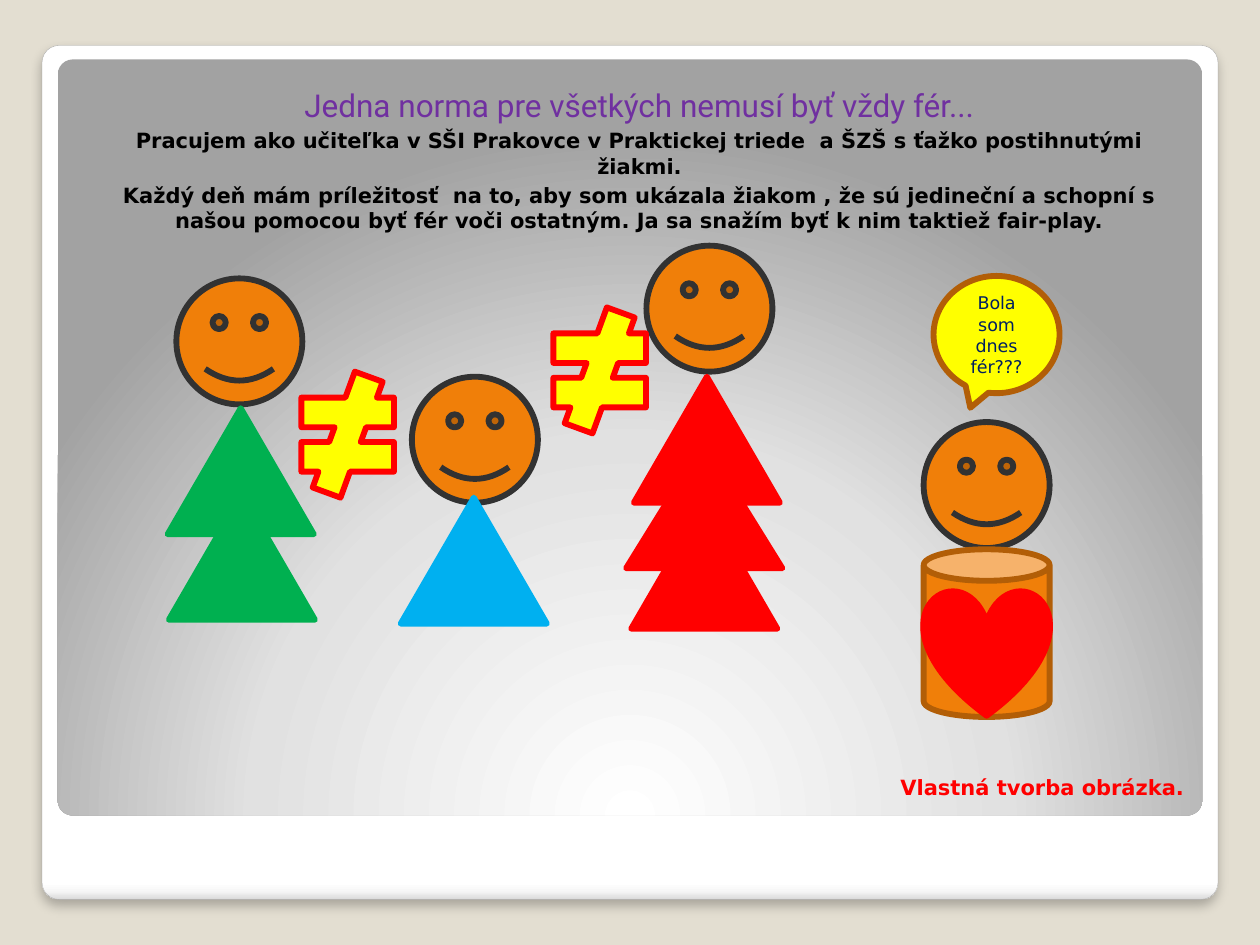
from dataclasses import dataclass
from typing import NamedTuple

from lxml import etree
from pptx import Presentation
from pptx.dml.color import RGBColor
from pptx.enum.shapes import MSO_SHAPE
from pptx.enum.text import MSO_ANCHOR, MSO_AUTO_SIZE, PP_ALIGN
from pptx.oxml.ns import nsdecls, qn
from pptx.util import Pt

ROUND_RECT = MSO_SHAPE.ROUNDED_RECTANGLE
SMILEY = MSO_SHAPE.SMILEY_FACE
TRIANGLE = MSO_SHAPE.ISOSCELES_TRIANGLE
NOT_EQUAL = MSO_SHAPE.MATH_NOT_EQUAL
CALLOUT = MSO_SHAPE.OVAL_CALLOUT
CAN = MSO_SHAPE.CAN
HEART = MSO_SHAPE.HEART
CENTER, RIGHT = PP_ALIGN.CENTER, PP_ALIGN.RIGHT
TOP, MIDDLE, BOTTOM = MSO_ANCHOR.TOP, MSO_ANCHOR.MIDDLE, MSO_ANCHOR.BOTTOM
NO_AUTOFIT = MSO_AUTO_SIZE.NONE


@dataclass(frozen=True)
class Theme:
    background: str = "E3DED1"
    card_line: str = "A4A4A4"
    orange: str = "F07F09"
    brown: str = "B25E07"
    dark: str = "323232"
    red: str = "FF0000"
    yellow: str = "FFFF00"
    green: str = "00B050"
    blue: str = "00B0F0"
    navy: str = "002060"
    purple: str = "7030A0"
    black: str = "000000"
    font: str = "DejaVu Sans"
    heading_font: str = "Roboto"
    heading_size: float = 18
    body_size: float = 12
    speech_size: float = 10
    line_width: float = 3.35


THEME = Theme()
UNIT = 72  # side of the faces, signs and heart


class Box(NamedTuple):
    left: float
    top: float
    width: float = UNIT
    height: float = UNIT


class Figure(NamedTuple):
    kind: MSO_SHAPE
    box: Box
    fill: str
    line: str


class Line(NamedTuple):
    text: str
    font: str
    size: float
    color: str
    bold: bool = False


def face(left: float, top: float) -> Figure:
    return Figure(SMILEY, Box(left, top), THEME.orange, THEME.dark)


def dress(left: float, top: float, color: str, width: float = 83.5) -> Figure:
    return Figure(TRIANGLE, Box(left, top, width), color, color)


def unequal(left: float, top: float) -> Figure:
    return Figure(NOT_EQUAL, Box(left, top), THEME.yellow, THEME.red)


FIGURES = [
    face(527.8, 241.2),
    face(235.4, 215.3),
    face(100.8, 159.1),
    face(369.4, 140.4),
    dress(360.7, 287.3, THEME.red),
    Figure(CAN, Box(527.8, 313.9, UNIT, 95.8), THEME.orange, THEME.brown),
    dress(229, 284.4, THEME.blue),
    dress(95.8, 233.3, THEME.green),
    dress(96.5, 282.2, THEME.green),
    dress(357.8, 252.7, THEME.red, 89.3),
    dress(362.2, 215.3, THEME.red),
    unequal(162.7, 212.4),
    unequal(306.7, 175.7),
    Figure(HEART, Box(527.8, 337), THEME.red, THEME.red),
]
SPEECH = Figure(CALLOUT, Box(533.5, 157.7, UNIT, 67), THEME.yellow, THEME.brown)

INTRO = [
    Line("Jedna norma pre všetkých nemusí byť vždy fér...",
         THEME.heading_font, THEME.heading_size, THEME.purple),
    Line("Pracujem ako učiteľka v SŠI Prakovce v Praktickej triede  a ŠZŠ "
         "s ťažko postihnutými žiakmi.",
         THEME.font, THEME.body_size, THEME.black, True),
    Line("Každý deň mám príležitosť  na to, aby som ukázala žiakom , že sú "
         "jedineční a schopní s našou pomocou byť fér voči ostatným. "
         "Ja sa snažím byť k nim taktiež fair-play.",
         THEME.font, THEME.body_size, THEME.black, True),
]

CARD_STOPS = [(0, "FFFFFF"), (98, "FFFFFF"), (99, "F7F7F7"), (100, "DADADA")]
PANEL_STOPS = [(0, "FFFFFF"), (55, "E1E1E1"), (100, "A2A2A2")]
DOWNWARD = '<a:lin ang="5400000" scaled="0"/>'
FROM_BELOW = ('<a:path path="circle"><a:fillToRect l="50000" t="175000" '
              'r="50000" b="-75000"/></a:path>')
CARD_SHADOW = (f'<a:effectLst {nsdecls("a")}><a:outerShdw blurRad="{Pt(6)}" '
               f'dist="{Pt(4)}" dir="5400000" algn="t" rotWithShape="0">'
               '<a:srgbClr val="000000"><a:alpha val="25000"/></a:srgbClr>'
               '</a:outerShdw></a:effectLst>')


def rgb(color: str) -> RGBColor:
    return RGBColor.from_string(color)


def add_shape(s, kind: MSO_SHAPE, box: Box):
    sp = s.shapes.add_shape(kind, *map(Pt, box))
    sp.shadow.inherit = False
    return sp


def add_panel(s, box: Box, stops: list[tuple[int, str]], direction: str):
    """Add a rounded panel with a gradient, behind the title."""
    sp = add_shape(s, ROUND_RECT, box)
    sp.adjustments[0] = 0.02
    sp.line.fill.background()
    marks = "".join(f'<a:gs pos="{pos * 1000}"><a:srgbClr val="{color}"/></a:gs>'
                    for pos, color in stops)
    grad = etree.fromstring(f'<a:gradFill {nsdecls("a")} rotWithShape="1">'
                            f'<a:gsLst>{marks}</a:gsLst>{direction}</a:gradFill>')
    sp.element.spPr.find(qn("a:prstGeom")).addnext(grad)
    s.shapes.title.element.addprevious(sp.element)
    return sp


def add_figure(s, figure: Figure):
    sp = add_shape(s, figure.kind, figure.box)
    sp.fill.solid()
    sp.fill.fore_color.rgb = rgb(figure.fill)
    sp.line.color.rgb = rgb(figure.line)
    sp.line.width = Pt(THEME.line_width)
    etree.SubElement(sp.element.spPr.find(qn("a:ln")), qn("a:round"))
    return sp


def write(sp, lines: list[Line], align: PP_ALIGN, anchor: MSO_ANCHOR,
          space_before: float = 0) -> None:
    tf = sp.text_frame
    tf.word_wrap = True
    tf.auto_size = NO_AUTOFIT
    tf.vertical_anchor = anchor
    for i, line in enumerate(lines):
        p = tf.add_paragraph() if i else tf.paragraphs[0]
        p.text = line.text
        p.alignment = align
        p.space_before = Pt(space_before)
        p.font.name = line.font
        p.font.size = Pt(line.size)
        p.font.bold = line.bold
        p.font.color.rgb = rgb(line.color)


def main() -> None:
    prs = Presentation()
    prs.slide_width, prs.slide_height = Pt(720), Pt(540)
    s = prs.slides.add_slide(prs.slide_layouts[5])
    s.background.fill.solid()
    s.background.fill.fore_color.rgb = rgb(THEME.background)

    card = add_panel(s, Box(24, 26, 672, 488), CARD_STOPS, DOWNWARD)
    card.line.color.rgb = rgb(THEME.card_line)
    card.line.width = Pt(0.16)
    card.element.spPr.find(qn("a:effectLst")).getparent().replace(
        card.element.spPr.find(qn("a:effectLst")), etree.fromstring(CARD_SHADOW))
    add_panel(s, Box(33, 34, 654, 432), PANEL_STOPS, FROM_BELOW)

    title = s.shapes.title
    title.left, title.top, title.width, title.height = map(
        Pt, Box(39.6, 392.4, 644.4, 82.8))
    write(title, [Line("Vlastná tvorba obrázka.", THEME.font, THEME.body_size,
                       THEME.red, True)], RIGHT, BOTTOM)
    title.text_frame.margin_bottom = Pt(18)

    intro = s.shapes.add_textbox(*map(Pt, Box(39.6, 41.8, 644.4, 329.8)))
    write(intro, INTRO, CENTER, TOP, space_before=2.5)
    tf = intro.text_frame
    tf.margin_left, tf.margin_top = Pt(14.4), Pt(7.2)

    for figure in FIGURES:
        add_figure(s, figure)
    write(add_figure(s, SPEECH),
          [Line("Bola som dnes fér???", THEME.font, THEME.speech_size, THEME.navy)],
          CENTER, MIDDLE)

    prs.save("out.pptx")


if __name__ == "__main__":
    main()
